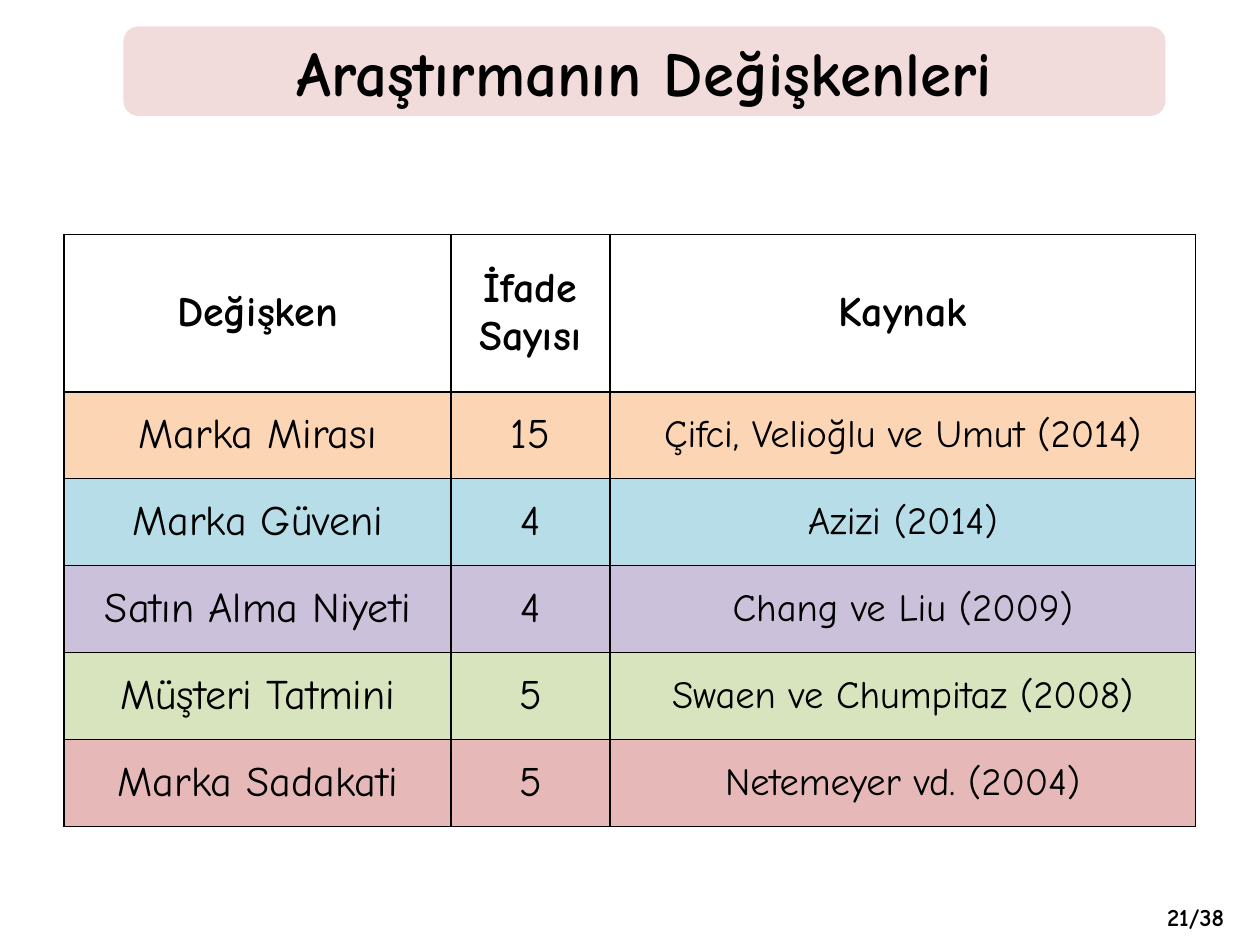
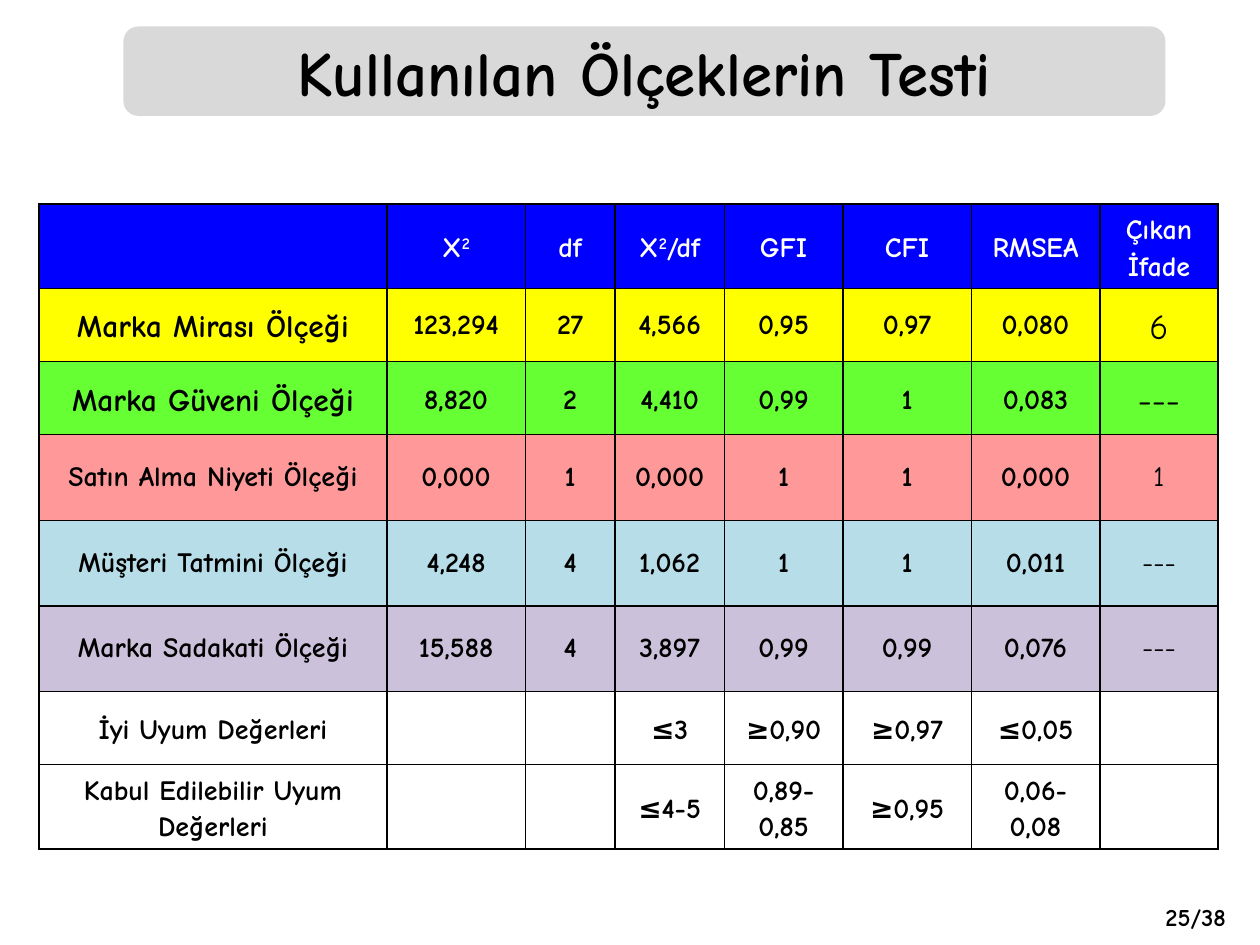
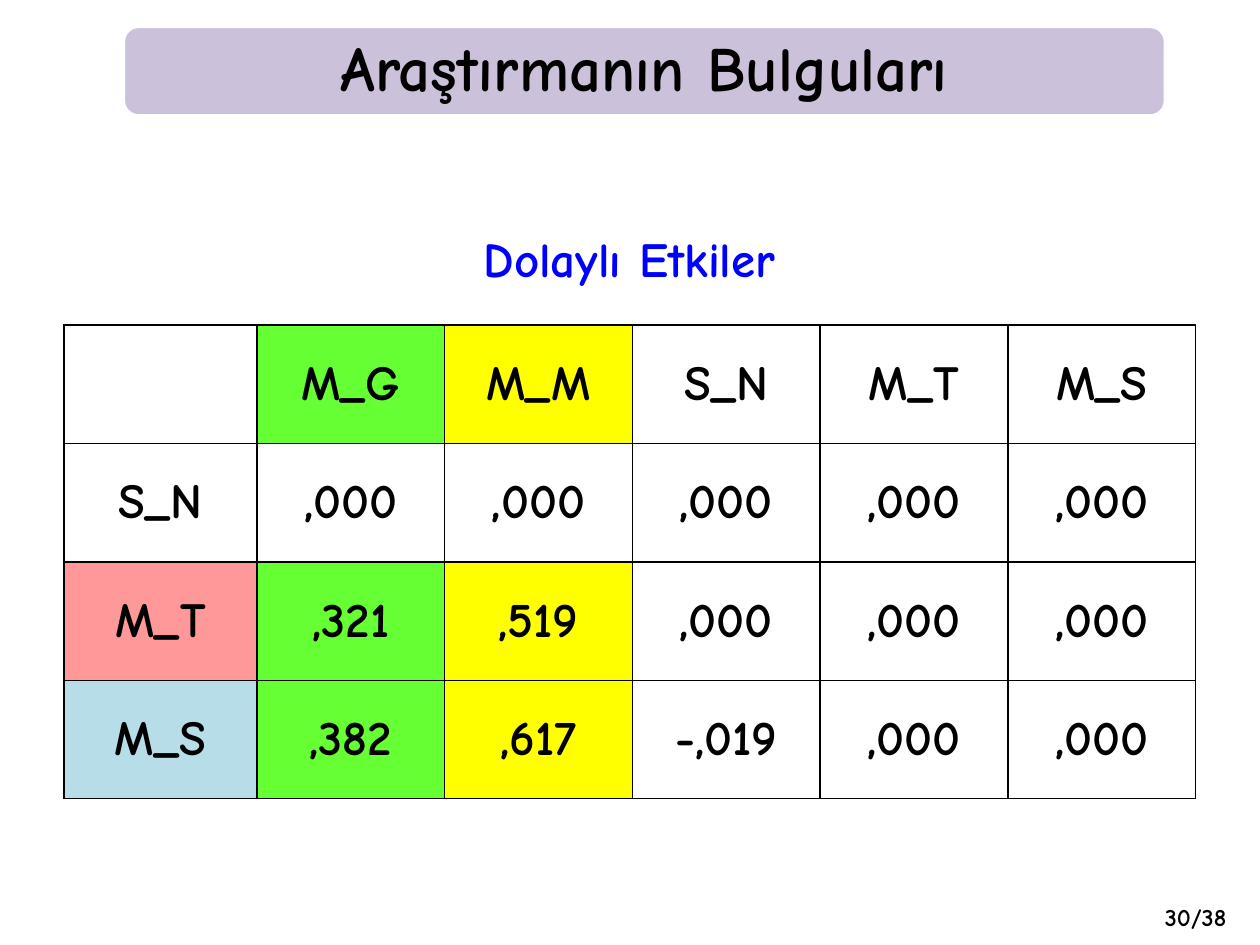
from dataclasses import dataclass

from lxml.etree import SubElement
from pptx import Presentation
from pptx.dml.color import RGBColor
from pptx.enum.shapes import MSO_SHAPE as Shape
from pptx.enum.text import MSO_ANCHOR as Anchor, MSO_AUTO_SIZE as AutoSize, PP_ALIGN as Align
from pptx.oxml.ns import qn
from pptx.util import Inches, Pt


@dataclass(frozen=True)
class Theme:
    font: str = "Comic Neue"
    black: str = "000000"
    white: str = "FFFFFF"
    blue: str = "0000FF"
    yellow: str = "FFFF00"
    green: str = "66FF33"
    coral: str = "FF9999"
    sky: str = "B7DEE8"
    lilac: str = "CCC1DA"
    orange: str = "FCD5B5"
    olive: str = "D7E4BD"
    rose: str = "E6B9B8"
    blush: str = "F2DCDB"
    grey: str = "D9D9D9"
    title_size: int = 36
    large: int = 28
    header: int = 24
    source: int = 22
    emphasis: int = 20
    label: int = 18
    body: int = 16
    page_number: int = 14


THEME = Theme()
BAND = (0.98, 0.21, 8.27, 0.71)
PAGE_NUMBER = (9.02, 7.11, 0.94, 0.34)
SUBTITLE = (3.55, 1.7, 2.89, 0.6)
TOTAL_PAGES = 38

VARIABLES = [
    ["Değişken", "İfade Sayısı", "Kaynak"],
    ["Marka Mirası", "15", "Çifci, Velioğlu ve Umut (2014)"],
    ["Marka Güveni", "4", "Azizi (2014)"],
    ["Satın Alma Niyeti", "4", "Chang ve Liu (2009)"],
    ["Müşteri Tatmini", "5", "Swaen ve Chumpitaz (2008)"],
    ["Marka Sadakati", "5", "Netemeyer vd. (2004)"],
]
VARIABLE_FILLS = [THEME.white, THEME.orange, THEME.sky, THEME.lilac, THEME.olive, THEME.rose]

SCALES = [
    ["", "X²", "df", "X²/df", "GFI", "CFI", "RMSEA", "Çıkan İfade"],
    ["Marka Mirası Ölçeği", "123,294", "27", "4,566", "0,95", "0,97", "0,080", "6"],
    ["Marka Güveni Ölçeği", "8,820", "2", "4,410", "0,99", "1", "0,083", "---"],
    ["Satın Alma Niyeti Ölçeği", "0,000", "1", "0,000", "1", "1", "0,000", "1"],
    ["Müşteri Tatmini Ölçeği", "4,248", "4", "1,062", "1", "1", "0,011", "---"],
    ["Marka Sadakati Ölçeği", "15,588", "4", "3,897", "0,99", "0,99", "0,076", "---"],
    ["İyi Uyum Değerleri", "", "", "≤3", "≥0,90", "≥0,97", "≤0,05", ""],
    ["Kabul Edilebilir Uyum Değerleri", "", "", "≤4-5", "0,89-0,85", "≥0,95", "0,06-0,08", ""],
]
SCALE_FILLS = [THEME.blue, THEME.yellow, THEME.green, THEME.coral,
               THEME.sky, THEME.lilac, THEME.white, THEME.white]

EFFECTS = [
    ["", "M_G", "M_M", "S_N", "M_T", "M_S"],
    ["S_N", ",000", ",000", ",000", ",000", ",000"],
    ["M_T", ",321", ",519", ",000", ",000", ",000"],
    ["M_S", ",382", ",617", "-,019", ",000", ",000"],
]
EFFECT_LABEL_FILLS = {2: THEME.coral, 3: THEME.sky}
EFFECT_COLUMN_FILLS = {1: THEME.green, 2: THEME.yellow}


@dataclass
class CellStyle:
    size: int
    fill: str
    bold: bool = True
    color: str = THEME.black
    spacing: float = 1.0


def variable_style(row, column):
    size = THEME.source if row and column == 2 else THEME.header
    return CellStyle(size, VARIABLE_FILLS[row], bold=row == 0)


def scale_style(row, column):
    style = CellStyle(THEME.body, SCALE_FILLS[row])
    outer = column in (0, 7)
    if row == 0:
        style.color = THEME.white
    if row in (0, 2, 6, 7) or row == 1 and outer:
        style.spacing = 1.15
    if row in (1, 2) and outer:
        style.size = THEME.label if column == 0 else THEME.emphasis
    style.bold = row == 0 or column != 7
    return style


def effect_style(row, column):
    fill = THEME.white
    if column == 0:
        fill = EFFECT_LABEL_FILLS.get(row, fill)
    elif row != 1:
        fill = EFFECT_COLUMN_FILLS.get(column, fill)
    return CellStyle(THEME.large, fill)


def inches(place):
    return [Inches(length) for length in place]


def rgb(value):
    return RGBColor.from_string(value)


def format_paragraph(para, size, color=THEME.black, bold=True, spacing=1.0):
    para.alignment = Align.CENTER
    if spacing != 1:
        para.line_spacing = spacing
    for span in para.runs:
        span.font.name = THEME.font
        span.font.size = Pt(size)
        span.font.bold = bold
        span.font.color.rgb = rgb(color)


def add_label(page, place, text, size, color=THEME.black, spacing=1.0):
    frame = page.shapes.add_textbox(*inches(place)).text_frame
    frame.word_wrap = False
    frame.text = text
    format_paragraph(frame.paragraphs[0], size, color, spacing=spacing)


def add_page(deck, title, band_color, number, outlined=False, spacing=1.0):
    """Add a slide with its title on a rounded band and its page number."""
    page = deck.slides.add_slide(deck.slide_layouts[5])
    kind = Shape.ROUNDED_RECTANGLE if outlined else Shape.FLOWCHART_ALTERNATE_PROCESS
    band = page.shapes.add_shape(kind, *inches(BAND))
    band.shadow.inherit = False
    band.fill.solid()
    band.fill.fore_color.rgb = rgb(band_color)
    if outlined:
        band.line.color.rgb = rgb(THEME.white)
        band.line.width = Pt(2)
    else:
        band.line.fill.background()

    box = page.shapes.title
    band._element.addnext(box._element)
    box.left, box.top, box.width, box.height = inches(BAND)
    frame = box.text_frame
    frame.text = title
    frame.word_wrap = True
    frame.auto_size = AutoSize.NONE
    frame.vertical_anchor = Anchor.MIDDLE
    format_paragraph(frame.paragraphs[0], THEME.title_size, spacing=spacing)

    add_label(page, PAGE_NUMBER, f"{number}/{TOTAL_PAGES}", THEME.page_number)
    return page


def add_borders(cell):
    properties = cell._tc.get_or_add_tcPr()
    for side in ("a:lnL", "a:lnR", "a:lnT", "a:lnB"):
        line = SubElement(properties, qn(side), w=str(Pt(1)))
        fill = SubElement(line, qn("a:solidFill"))
        SubElement(fill, qn("a:srgbClr"), val=THEME.black)


def write_cell(cell, text, style):
    """Write the text, raising the 2 of a square as a superscript run."""
    para = cell.text_frame.paragraphs[0]
    before, square, after = text.partition("²")
    for part in (before, square and "2", after):
        if part:
            para.add_run().text = part
    format_paragraph(para, style.size, style.color, style.bold, style.spacing)
    if square:
        para.runs[1]._r.get_or_add_rPr().set("baseline", "30000")


def add_grid(page, left, top, widths, heights, rows, style_of, margins=(0.1, 0.05)):
    place = inches((left, top, sum(widths), sum(heights)))
    table = page.shapes.add_table(len(rows), len(widths), *place).table
    table.first_row = table.horz_banding = False
    for column, width in zip(table.columns, widths):
        column.width = Inches(width)
    for line, height in zip(table.rows, heights):
        line.height = Inches(height)
    side, edge = inches(margins)
    for r, texts in enumerate(rows):
        for c, text in enumerate(texts):
            cell, style = table.cell(r, c), style_of(r, c)
            cell.margin_left = cell.margin_right = side
            cell.margin_top = cell.margin_bottom = edge
            cell.vertical_anchor = Anchor.MIDDLE
            add_borders(cell)
            cell.fill.solid()
            cell.fill.fore_color.rgb = rgb(style.fill)
            write_cell(cell, text, style)


def main():
    deck = Presentation()
    deck.slide_width, deck.slide_height = Inches(10), Inches(7.5)

    page = add_page(deck, "Araştırmanın Değişkenleri", THEME.blush, 21)
    add_grid(page, 0.51, 1.86, [3.07, 1.26, 4.65], [1.25] + [0.69] * 5,
             VARIABLES, variable_style)

    page = add_page(deck, "Kullanılan Ölçeklerin Testi", THEME.grey, 25)
    add_grid(page, 0.31, 1.62, [2.76, 1.1, 0.71, 0.87, 0.94, 1.02, 1.02, 0.94],
             [0.67, 0.58, 0.58, 0.68, 0.68, 0.68, 0.58, 0.67],
             SCALES, scale_style, margins=(0.07, 0))

    page = add_page(deck, "Araştırmanın Bulguları", THEME.lilac, 30, outlined=True, spacing=0.9)
    add_grid(page, 0.51, 2.58, [1.53] + [1.49] * 5, [0.94] * 4,
             EFFECTS, effect_style, margins=(0.04, 0.02))
    add_label(page, SUBTITLE, "Dolaylı Etkiler", THEME.large, THEME.blue, spacing=1.14)

    deck.save("out.pptx")


if __name__ == "__main__":
    main()
